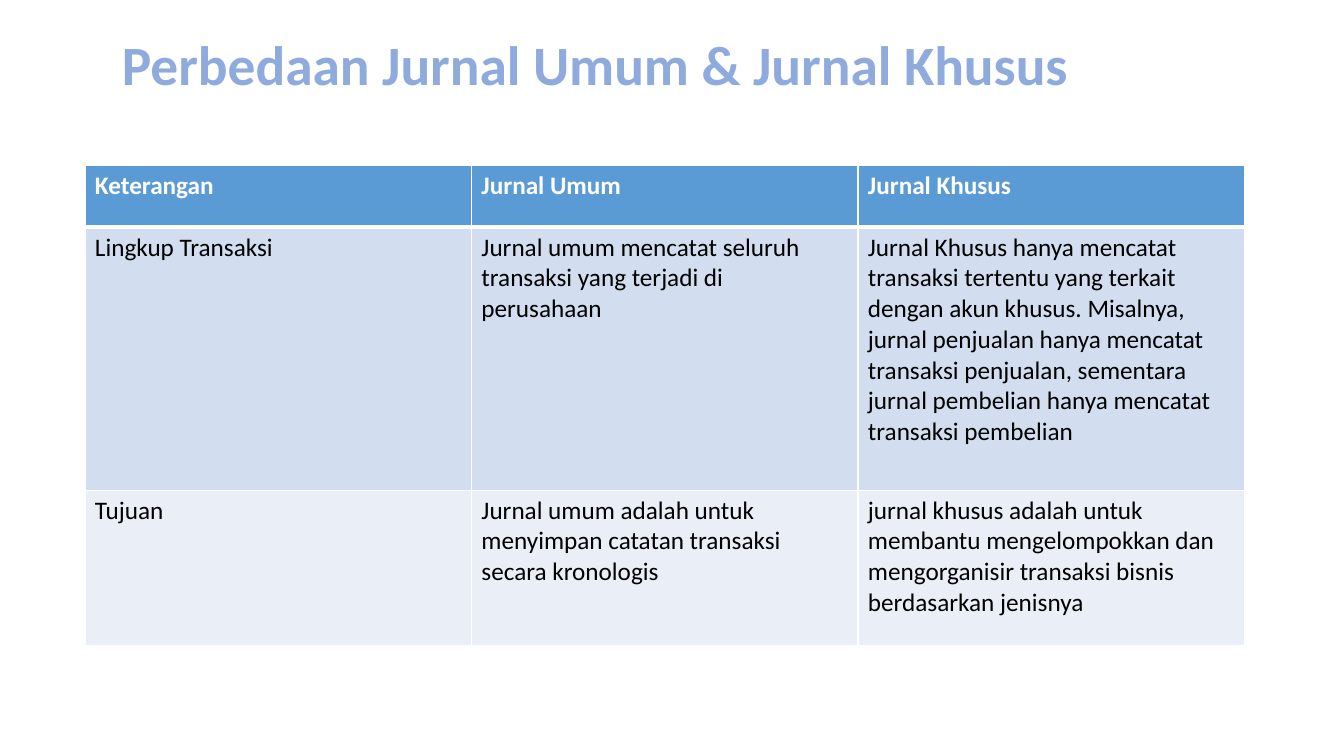
import lxml.etree
import pptx
import pptx.dml.color
import pptx.enum.text
import pptx.oxml.ns
import pptx.util

Cm = pptx.util.Cm
Pt = pptx.util.Pt

FONT = "Calibri"
COLOURS = {
    "title": "8FAADC",
    "header": "5B9BD5",
    "odd_row": "D2DEEF",
    "even_row": "EAEFF7",
    "white": "FFFFFF",
    "black": "000000",
}
ROWS = [
    ("Keterangan", "Jurnal Umum", "Jurnal Khusus"),
    (
        "Lingkup Transaksi",
        "Jurnal umum mencatat seluruh transaksi yang terjadi di perusahaan",
        "Jurnal Khusus hanya mencatat transaksi tertentu yang terkait dengan akun khusus. "
        "Misalnya, jurnal penjualan hanya mencatat transaksi penjualan, sementara "
        "jurnal pembelian hanya mencatat transaksi pembelian",
    ),
    (
        "Tujuan",
        "Jurnal umum adalah untuk menyimpan catatan transaksi secara kronologis",
        "jurnal khusus adalah untuk membantu mengelompokkan dan mengorganisir "
        "transaksi bisnis berdasarkan jenisnya",
    ),
]
ROW_FILLS = ["header", "odd_row", "even_row"]
ROW_HEIGHTS = [1.55, 6.63, 3.91]
COLUMN_WIDTH = 9.74


def rgb(name):
    return pptx.dml.color.RGBColor.from_string(COLOURS[name])


def format_runs(frame, size, colour, bold):
    for paragraph in frame.paragraphs:
        for run in paragraph.runs:
            run.font.name = FONT
            run.font.size = Pt(size)
            run.font.bold = bold
            run.font.color.rgb = rgb(colour)


def add_border(cell, side, width):
    qn = pptx.oxml.ns.qn
    properties = cell._tc.get_or_add_tcPr()
    line = lxml.etree.SubElement(properties, qn(f"a:ln{side}"), w=str(Pt(width)))
    fill = lxml.etree.SubElement(line, qn("a:solidFill"))
    lxml.etree.SubElement(fill, qn("a:srgbClr"), val=COLOURS["white"])


def add_title(slide, text):
    title = slide.shapes.add_textbox(Cm(2.82), Cm(0.99), Cm(29.21), Cm(1.4))
    frame = title.text_frame
    frame.word_wrap = True
    frame.vertical_anchor = pptx.enum.text.MSO_ANCHOR.MIDDLE
    frame.text = text
    frame.paragraphs[0].line_spacing = 0.9
    format_runs(frame, 39.6, "title", True)


def fill_cell(cell, text, row):
    is_header = row == 0
    cell.text_frame.text = text
    format_runs(cell.text_frame, 18, "white" if is_header else "black", is_header)
    # The line under the header is thicker than the others
    widths = {"L": 1, "R": 1, "T": 3 if row == 1 else 1, "B": 3 if is_header else 1}
    for side, width in widths.items():
        add_border(cell, side, width)
    cell.fill.solid()
    cell.fill.fore_color.rgb = rgb(ROW_FILLS[row])


def add_comparison(slide):
    columns = len(ROWS[0])
    comparison = slide.shapes.add_table(
        len(ROWS), columns, Cm(2.14), Cm(4.17),
        Cm(COLUMN_WIDTH * columns), Cm(sum(ROW_HEIGHTS)),
    ).table
    for column in comparison.columns:
        column.width = Cm(COLUMN_WIDTH)
    for row, texts in enumerate(ROWS):
        comparison.rows[row].height = Cm(ROW_HEIGHTS[row])
        for column, text in enumerate(texts):
            fill_cell(comparison.cell(row, column), text, row)


def main():
    presentation = pptx.Presentation()
    presentation.slide_width = Cm(33.87)
    presentation.slide_height = Cm(19.05)
    slide = presentation.slides.add_slide(presentation.slide_layouts[6])

    # Heading
    add_title(slide, "Perbedaan Jurnal Umum & Jurnal Khusus")

    # Comparison of the two journals
    add_comparison(slide)

    presentation.save("out.pptx")


if __name__ == "__main__":
    main()
